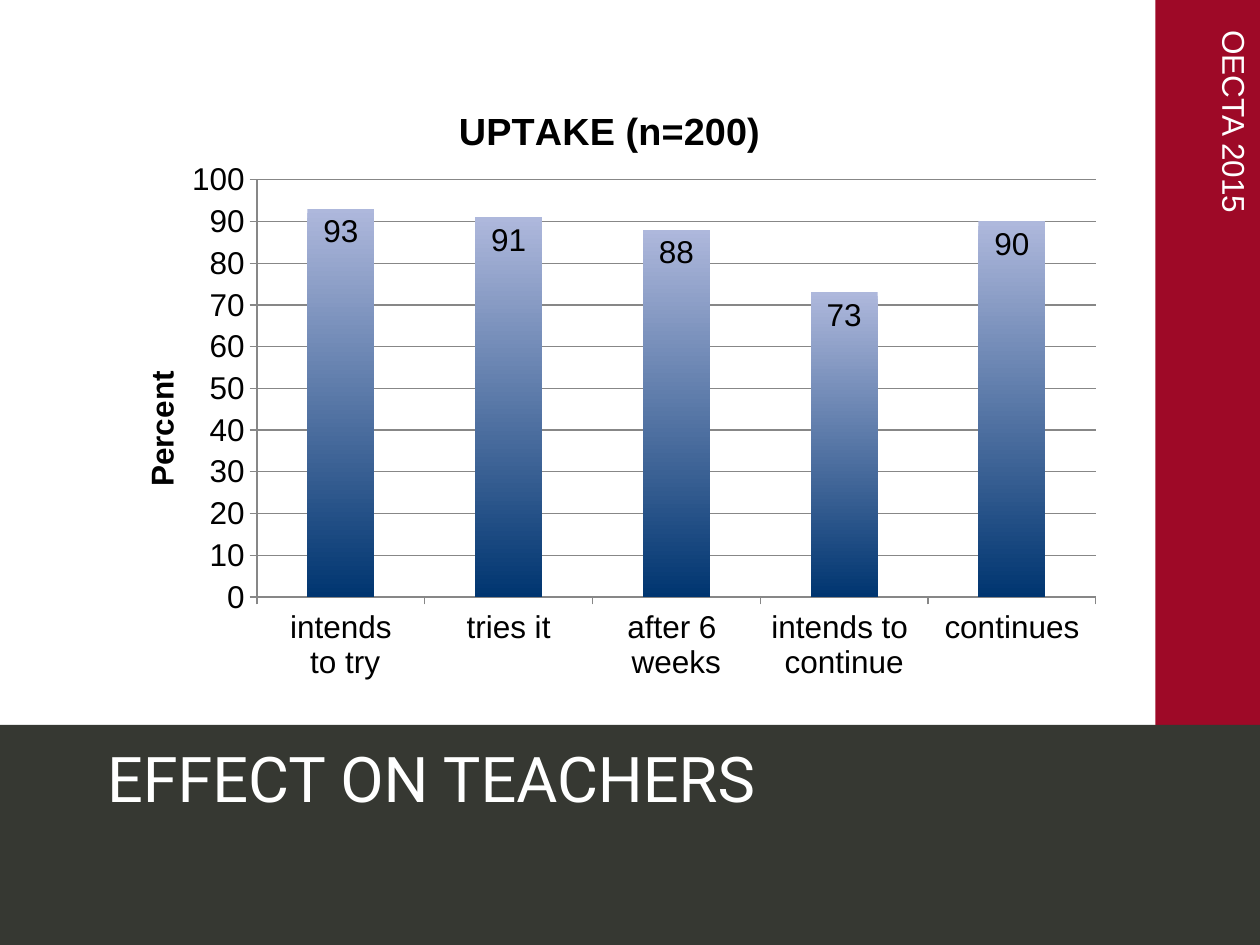
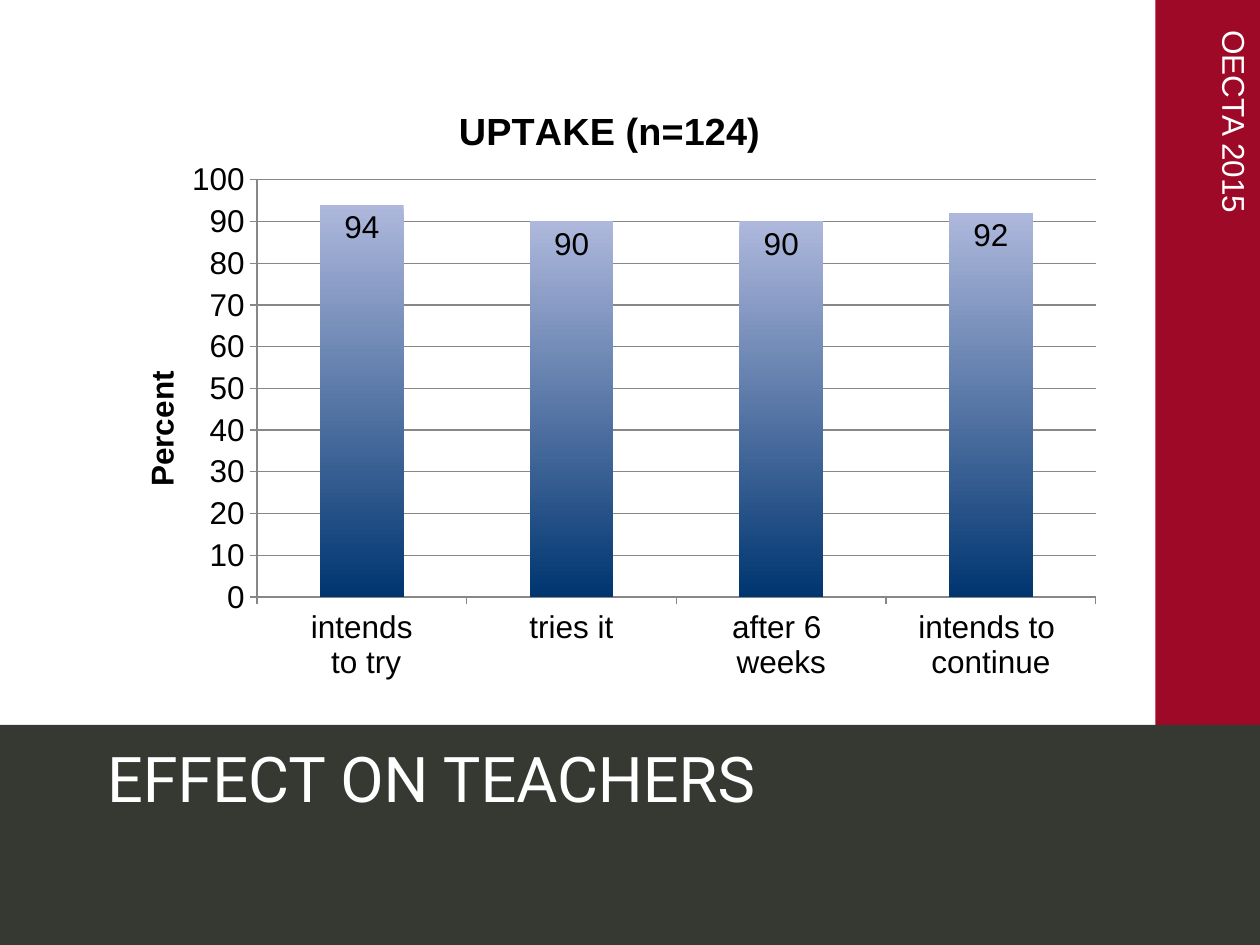
from lxml import etree
from pptx import Presentation
from pptx import util as u
from pptx.chart.data import CategoryChartData
from pptx.dml.color import RGBColor
from pptx.enum import chart as charts, shapes, text
from pptx.oxml import ns

WIDTH, HEIGHT = u.Inches(10), u.Inches(7.5)
TITLE_LAYOUT = 5

WHITE = RGBColor(0xFF, 0xFF, 0xFF)
BLACK = RGBColor(0, 0, 0)
CRIMSON = RGBColor(0x9E, 0x09, 0x27)
CHARCOAL = RGBColor(0x36, 0x38, 0x32)
GRID_GREY = RGBColor(0x87, 0x87, 0x87)
BAR_TOP = RGBColor(0xAE, 0xB8, 0xDC)
BAR_BASE = RGBColor(0x00, 0x35, 0x70)

BODY_FONT, TITLE_FONT = "Arial", "Roboto"
BODY_SIZE = 18

SIDE_BAND = (0.917, 0, 0.083, 1)
TITLE_BAND = (0, 0.767, 1, 0.233)
TITLE_AREA = (0.075, 0.767, 0.892, 0.111)
CHART_AREA = (0.075, 0.08, 0.811, 0.653)

STAGES = ["intends\n to try", "tries it", "after 6 \nweeks",
          "intends to \ncontinue", "continues"]
UPTAKE = [
    ("UPTAKE (n=200)", [93, 91, 88, 73, 90]),
    ("UPTAKE (n=124)", [94, 90, 90, 92]),
]


def area(shares):
    left, top, width, height = shares
    return (round(left * WIDTH), round(top * HEIGHT),
            round(width * WIDTH), round(height * HEIGHT))


def style_font(font, size, color, name=BODY_FONT, bold=False):
    font.size = u.Pt(size)
    font.name = name
    font.bold = bold
    font.color.rgb = color


def add_band(page, shares, color):
    band = page.shapes.add_shape(shapes.MSO_SHAPE.RECTANGLE, *area(shares))
    band.shadow.inherit = False
    band.fill.solid()
    band.fill.fore_color.rgb = color
    band.line.fill.background()


def add_side_label(page, words):
    length, depth = u.Inches(3.91), u.Inches(0.4)
    box = page.shapes.add_textbox(
        WIDTH - (length + depth) // 2, (length - depth) // 2, length, depth)
    box.rotation = 90
    frame = box.text_frame
    frame.word_wrap = True
    frame.margin_left = u.Inches(0.24)
    frame.text = words
    style_font(frame.paragraphs[0].runs[0].font, BODY_SIZE, WHITE)


def set_title(page, words):
    title = page.shapes.title
    title.left, title.top, title.width, title.height = area(TITLE_AREA)
    frame = title.text_frame
    frame.text = words
    frame.vertical_anchor = text.MSO_ANCHOR.MIDDLE
    para = frame.paragraphs[0]
    para.alignment = text.PP_ALIGN.LEFT
    style_font(para.runs[0].font, 36, WHITE, TITLE_FONT)
    title.element.getparent().append(title.element)


def make_layout(inner=False, **shares):
    layout = etree.Element(ns.qn("c:layout"))
    manual = etree.SubElement(layout, ns.qn("c:manualLayout"))
    settings = {"layoutTarget": "inner"} if inner else {}
    settings.update(xMode="edge", yMode="edge", **shares)
    for tag, value in settings.items():
        etree.SubElement(manual, ns.qn(f"c:{tag}")).set("val", str(value))
    return layout


def set_chart_title(owner, words, size, **place):
    owner.has_title = True
    heading = getattr(owner, "chart_title", None) or owner.axis_title
    frame = heading.text_frame
    frame.text = words
    style_font(frame.paragraphs[0].runs[0].font, size, BLACK, bold=True)
    element = frame._txBody.getparent().getparent()
    for old in element.findall(ns.qn("c:layout")):
        element.remove(old)
    element.find(ns.qn("c:tx")).addnext(make_layout(**place))


def style_axes(chart):
    values = chart.value_axis
    values.minimum_scale, values.maximum_scale = 0, 100
    values.major_unit = 10
    values.major_gridlines.format.line.color.rgb = GRID_GREY
    for axis in (values, chart.category_axis):
        axis.major_tick_mark = charts.XL_TICK_MARK.OUTSIDE
        axis.format.line.color.rgb = GRID_GREY
    set_chart_title(values, "Percent", BODY_SIZE, x=0.04, y=0.47)


def style_bars(plot):
    plot.gap_width = 150
    plot.vary_by_categories = False
    fill = plot.series[0].format.fill
    fill.gradient()
    fill.gradient_angle = 270
    for stop, color in zip(fill.gradient_stops, (BAR_TOP, BAR_BASE)):
        stop.color.rgb = color
    plot.has_data_labels = True
    labels = plot.data_labels
    labels.show_value = True
    labels.position = charts.XL_LABEL_POSITION.INSIDE_END
    style_font(labels.font, BODY_SIZE, BLACK)


def add_uptake_chart(page, heading, percents):
    chart_data = CategoryChartData()
    chart_data.categories = STAGES[:len(percents)]
    chart_data.add_series("Series 1", percents)
    chart = page.shapes.add_chart(
        charts.XL_CHART_TYPE.COLUMN_CLUSTERED, *area(CHART_AREA),
        chart_data).chart
    style_font(chart.font, BODY_SIZE, BLACK)
    chart.has_legend = False
    set_chart_title(chart, heading, 21.6, x=0.35, y=0.04)
    style_axes(chart)
    style_bars(chart.plots[0])
    plot_area = chart.element.find(".//" + ns.qn("c:plotArea"))
    for old in plot_area.findall(ns.qn("c:layout")):
        plot_area.remove(old)
    plot_area.insert(0, make_layout(inner=True, x=0.159, y=0.169,
                                    w=0.821, h=0.676))


def add_page(deck, heading, percents):
    page = deck.slides.add_slide(deck.slide_layouts[TITLE_LAYOUT])
    add_band(page, SIDE_BAND, CRIMSON)
    add_band(page, TITLE_BAND, CHARCOAL)
    add_side_label(page, "OECTA 2015")
    set_title(page, "EFFECT ON TEACHERS")
    add_uptake_chart(page, heading, percents)


def main():
    deck = Presentation()
    deck.slide_width, deck.slide_height = WIDTH, HEIGHT
    for heading, percents in UPTAKE:
        add_page(deck, heading, percents)
    deck.save("out.pptx")


if __name__ == "__main__":
    main()
